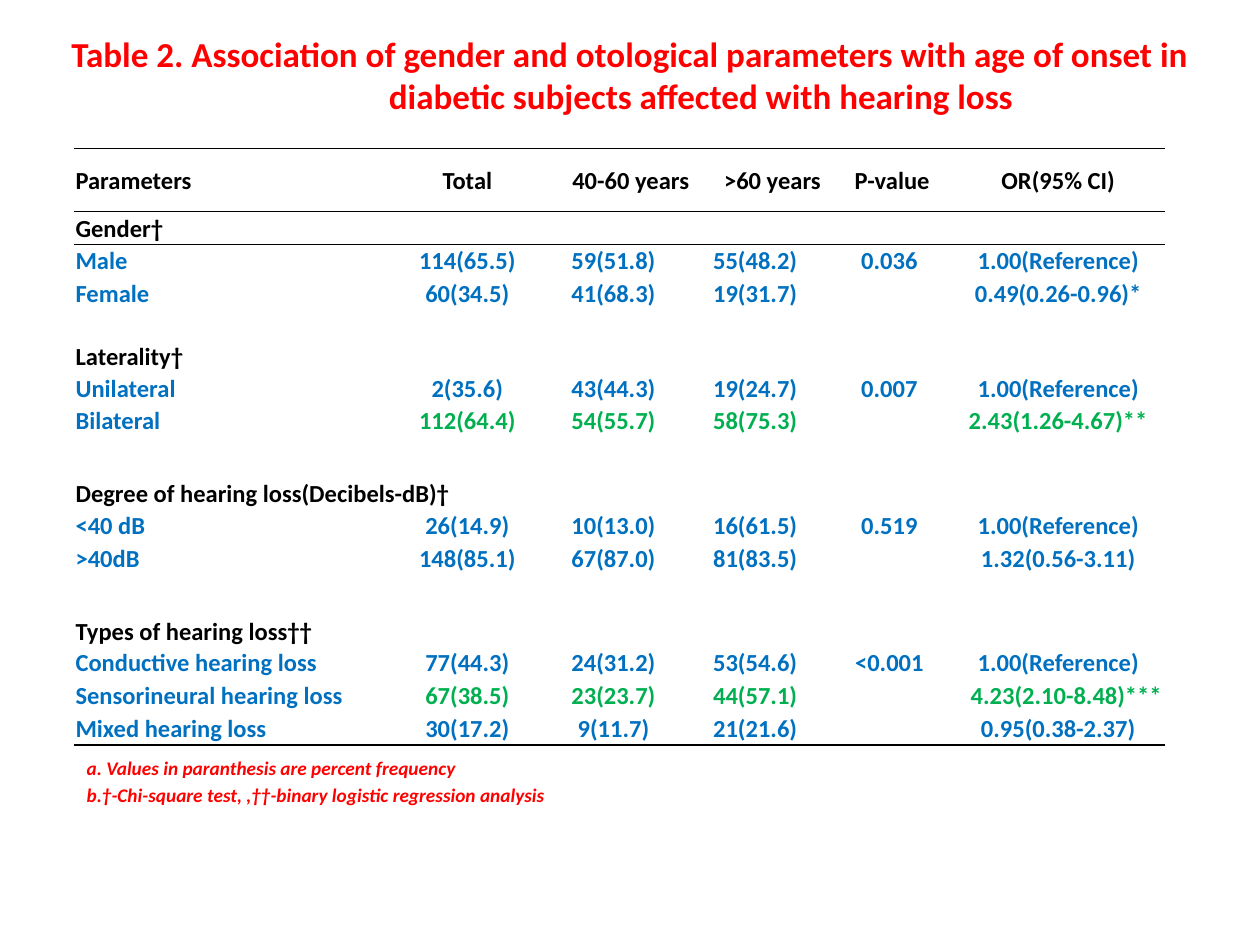
from lxml import etree
from pptx import Presentation
from pptx.dml.color import RGBColor
from pptx.enum.text import MSO_ANCHOR, PP_ALIGN
from pptx.oxml.ns import qn
from pptx.util import Pt

LEFT, CENTER = PP_ALIGN.LEFT, PP_ALIGN.CENTER
MIDDLE, BOTTOM = MSO_ANCHOR.MIDDLE, MSO_ANCHOR.BOTTOM
BLACK, BLUE, GREEN, RED = "000000", "0070C0", "00B050", "FF0000"
NO_STYLE = "{2D5ABB26-0587-4C30-8999-92F81FD0307C}"


def add_span(para, text, size, color, italic=False):
    span = para.add_run()
    span.text = text
    span.font.name = "Calibri"
    span.font.size = Pt(size)
    span.font.bold = True
    span.font.italic = italic
    span.font.color.rgb = RGBColor.from_string(color)


def add_border(cell, side):
    """Draw a 1 pt black line on one side of a cell: lnT or lnB."""
    line = etree.Element(qn("a:" + side), w=str(Pt(1)))
    fill = etree.SubElement(line, qn("a:solidFill"))
    etree.SubElement(fill, qn("a:srgbClr"), val=BLACK)
    properties = cell._tc.get_or_add_tcPr()
    lines = properties.findall(qn("a:lnT"))
    properties.insert(len(lines), line)


# Each row: label, total, 40-60 years, >60 years, P-value, odds ratio
HEADER = ["Parameters", "Total", " 40-60 years", " >60 years", " P-value", "OR(95% CI)"]
GROUPS = [
    ("Gender†", [
        ["Male", "114(65.5)", "59(51.8)", "55(48.2)", "0.036", "1.00(Reference)"],
        ["Female", "60(34.5)", "41(68.3)", "19(31.7)", "", "0.49(0.26-0.96)*"]]),
    ("Laterality†", [
        ["Unilateral", "2(35.6)", "43(44.3)", "19(24.7)", "0.007", "1.00(Reference)"],
        ["Bilateral", "112(64.4)", "54(55.7)", "58(75.3)", "", "2.43(1.26-4.67)**"]]),
    ("Degree of hearing loss(Decibels-dB)†", [
        ["<40 dB", "26(14.9)", "10(13.0)", "16(61.5)", "0.519", "1.00(Reference)"],
        [">40dB", "148(85.1)", "67(87.0)", "81(83.5)", "", "1.32(0.56-3.11)"]]),
    ("Types of hearing loss††", [
        ["Conductive hearing loss", "77(44.3)", "24(31.2)", "53(54.6)", "<0.001",
         "1.00(Reference)"],
        ["Sensorineural hearing loss", "67(38.5)", "23(23.7)", "44(57.1)", "",
         "4.23(2.10-8.48)***"],
        ["Mixed hearing loss", "30(17.2)", "9(11.7)", "21(21.6)", "", "0.95(0.38-2.37)"]]),
]
SIGNIFICANT = {"Bilateral", "Sensorineural hearing loss"}
COLUMN_WIDTHS = [180.7, 87.8, 79.2, 16.6, 66.2, 70.6, 122.4]
ROW_HEIGHT = 18.75
SPECIAL_HEIGHTS = {1: 36, 5: 16.6, 9: 22.3, 13: 22.3}

rows = [[], HEADER]
for number, (group, members) in enumerate(GROUPS):
    if number:
        rows.append([])
    rows.append([group])
    rows.extend(members)
last_row = len(rows) - 1

deck = Presentation()
deck.slide_width, deck.slide_height = Pt(720), Pt(540)
page = deck.slides.add_slide(deck.slide_layouts[6])

frame = page.shapes.add_table(len(rows), len(COLUMN_WIDTHS), Pt(42.5), Pt(66.2),
                              Pt(sum(COLUMN_WIDTHS)), Pt(357.8))
table = frame.table
table.first_row = table.horz_banding = False
table._tbl.tblPr.find(qn("a:tableStyleId")).text = NO_STYLE
for column, width in zip(table.columns, COLUMN_WIDTHS):
    column.width = Pt(width)

for r, values in enumerate(rows):
    table.rows[r].height = Pt(SPECIAL_HEIGHTS.get(r, ROW_HEIGHT))
    is_group = len(values) == 1
    if is_group:
        first, last = 0, 6
    elif r < 2:
        first, last = 2, 3
    else:
        first, last = 3, 4
    table.cell(r, first).merge(table.cell(r, last))
    # Text goes to every column except the one swallowed by the merge
    texts = dict(zip([c for c in range(7) if c != last], values))

    for c in range(7):
        cell = table.cell(r, c)
        cell.fill.background()
        cell.margin_left = cell.margin_top = cell.margin_right = Pt(0.7)
        cell.margin_bottom = Pt(0)
        cell.vertical_anchor = BOTTOM if is_group else MIDDLE
        if r in (1, 2):
            add_border(cell, "lnT")
        if r in (0, 1, last_row):
            add_border(cell, "lnB")
        para = cell.text_frame.paragraphs[0]
        text = texts.get(c)
        if not text:
            etree.SubElement(para._p, qn("a:endParaRPr"), sz="1100")
            continue
        para.alignment = CENTER if c else LEFT
        if r == 1 or is_group:
            color = BLACK
        else:
            color = GREEN if c and values[0] in SIGNIFICANT else BLUE
        if text.endswith("***"):
            cell.margin_left = Pt(10)
        add_span(para, text, 14, color)

# Box position, hanging indent, alignment, size, italic, space before, paragraphs
TEXTS = [
    ((0, 15.1, 720, 55.4), 81.4, CENTER, 20, False, 4,
     ["Table 2. Association of gender and otological parameters with age of onset in "
      "diabetic subjects affected with hearing loss"]),
    ((42.5, 428.4, 329, 36.7), 27, LEFT, 11, True, 2.2,
     ["a. Values in paranthesis are percent frequency",
      "b.†-Chi-square test, ,††-binary logistic regression analysis"]),
]
for place, indent, alignment, size, italic, space, lines in TEXTS:
    box = page.shapes.add_textbox(*map(Pt, place))
    box.text_frame.word_wrap = True
    for i, text in enumerate(lines):
        para = box.text_frame.add_paragraph() if i else box.text_frame.paragraphs[0]
        para.alignment = alignment
        para.space_before = Pt(space)
        properties = para._p.get_or_add_pPr()
        properties.set("marL", str(Pt(indent)))
        properties.set("indent", str(-Pt(indent)))
        add_span(para, text, size, RED, italic)

deck.save("out.pptx")
